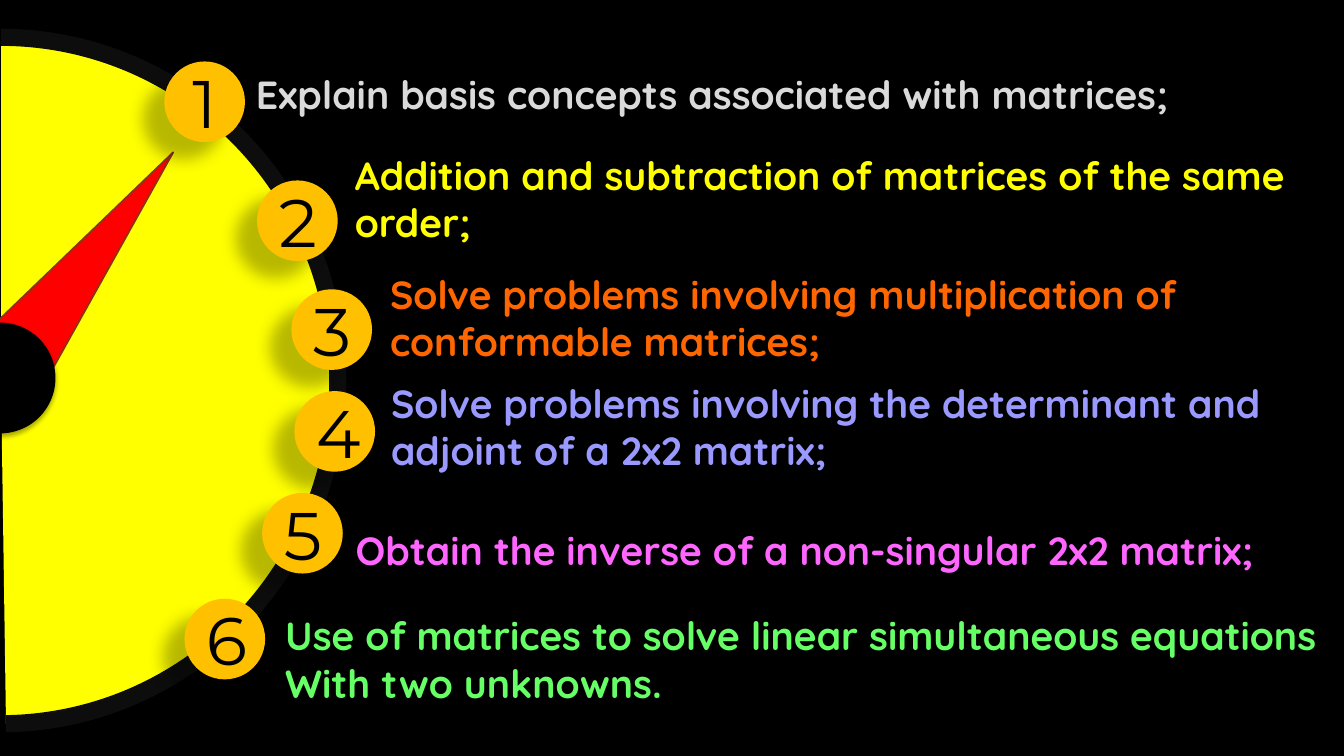
"""Build the dial slide of six matrix objectives."""
from dataclasses import dataclass

from lxml import etree
from pptx import Presentation
from pptx import util as u
from pptx.dml.color import RGBColor
from pptx.enum import shapes, text
from pptx.oxml import ns

PX = 9144
BADGE = 80
COLOURS = {
    "black": "000000", "rim": "0D0D0D", "yellow": "FFFF00", "red": "FF0000",
    "brown": "8B3314", "amber": "FFC000", "grey": "DADADA", "orange": "FF6600",
    "violet": "9999FF", "pink": "FF66FF", "green": "66FF66",
}
DIGIT = {"size": u.Pt(48), "name": "Montserrat"}
LABEL = {"size": u.Pt(28), "name": "Quicksand", "bold": True}


@dataclass(frozen=True)
class Box:
    x: int
    y: int
    w: int
    h: int

    def emu(self) -> list[int]:
        return [v * PX for v in (self.x, self.y, self.w, self.h)]


@dataclass(frozen=True)
class Shadow:
    alpha: int
    blur: float
    dist: float
    angle: int


@dataclass(frozen=True)
class Objective:
    badge: tuple[int, int]
    box: Box
    colour: str
    lines: tuple[str, ...]


BADGE_SHADOW = Shadow(28, 11.8, 19.7, 141)
HUB_SHADOW = Shadow(32, 3.5, 2.2, 90)
OBJECTIVES = [
    Objective((163, 61), Box(244, 65, 947, 57), "grey",
              ("Explain basis concepts associated with matrices;",)),
    Objective((255, 179), Box(342, 145, 958, 104), "yellow",
              ("Addition and subtraction of matrices of the same", "order;")),
    Objective((289, 287), Box(377, 263, 805, 104), "orange",
              ("Solve problems involving multiplication of", "conformable matrices;")),
    Objective((292, 388), Box(378, 371, 901, 104), "violet",
              ("Solve problems involving the determinant and", "adjoint of a 2x2 matrix;")),
    Objective((260, 489), Box(343, 517, 915, 57), "pink",
              ("Obtain the inverse of a non-singular 2x2 matrix;",)),
    Objective((183, 594), Box(273, 602, 1055, 104), "green",
              ("Use of matrices to solve linear simultaneous equations", "With two unknowns.")),
]


def rgb(name: str) -> RGBColor:
    return RGBColor.from_string(COLOURS[name])


def add_shadow(sp, shadow: Shadow) -> None:
    effects = sp._element.spPr.find(ns.qn("a:effectLst"))
    outer = etree.SubElement(effects, ns.qn("a:outerShdw"), {
        "blurRad": str(int(u.Pt(shadow.blur))), "dist": str(int(u.Pt(shadow.dist))),
        "dir": str(shadow.angle * 60000), "algn": "ctr", "rotWithShape": "0"})
    clr = etree.SubElement(outer, ns.qn("a:srgbClr"), val=COLOURS["black"])
    etree.SubElement(clr, ns.qn("a:alpha"), val=str(shadow.alpha * 1000))


def add_figure(parent, kind, box: Box, fill: str, line: str = "",
               width: float = 0, rotation: float = 0):
    sp = parent.add_shape(kind, *box.emu())
    sp.shadow.inherit = False
    sp.rotation = rotation
    sp.fill.solid()
    sp.fill.fore_color.rgb = rgb(fill)
    if line:
        sp.line.color.rgb = rgb(line)
        sp.line.width = u.Pt(width)
    else:
        sp.line.fill.background()
    return sp


def add_run(p, words: str, colour: str, style: dict) -> None:
    r = p.add_run()
    r.text = words
    for key, value in style.items():
        setattr(r.font, key, value)
    r.font.color.rgb = rgb(colour)


def add_dial(parent) -> None:
    dial = add_figure(parent, shapes.MSO_SHAPE.ARC, Box(-333, 37, 668, 681),
                      "yellow", "rim", 12.25)
    dial.adjustments[0] = 162.014
    dial.adjustments[1] = 53.502
    pointer = parent.add_group_shape().shapes
    add_figure(pointer, shapes.MSO_SHAPE.ISOSCELES_TRIANGLE, Box(44, 122, 84, 281),
               "red", "brown", 1.25, 37.6)
    hub = add_figure(pointer, shapes.MSO_SHAPE.OVAL, Box(-55, 320, 110, 110),
                     "black", rotation=257.6)
    add_shadow(hub, HUB_SHADOW)


def add_objective(parent, number: int, item: Objective) -> None:
    badge = add_figure(parent, shapes.MSO_SHAPE.OVAL,
                       Box(*item.badge, BADGE, BADGE), "amber")
    add_shadow(badge, BADGE_SHADOW)
    tf = badge.text_frame
    tf.vertical_anchor = text.MSO_ANCHOR.MIDDLE
    p = tf.paragraphs[0]
    p.alignment = text.PP_ALIGN.CENTER
    add_run(p, str(number), "black", DIGIT)

    tf = parent.add_textbox(*item.box.emu()).text_frame
    tf.word_wrap = False
    tf.auto_size = text.MSO_AUTO_SIZE.SHAPE_TO_FIT_TEXT
    for i, line in enumerate(item.lines):
        p = tf.add_paragraph() if i else tf.paragraphs[0]
        add_run(p, line, item.colour, LABEL)


def main() -> None:
    prs = Presentation()
    prs.slide_width, prs.slide_height = 1333 * PX, 750 * PX
    s = prs.slides.add_slide(prs.slide_layouts[6])
    s.background.fill.solid()
    s.background.fill.fore_color.rgb = rgb("black")
    add_dial(s.shapes)
    for number, item in enumerate(OBJECTIVES, 1):
        add_objective(s.shapes, number, item)
    prs.save("out.pptx")


if __name__ == "__main__":
    main()
